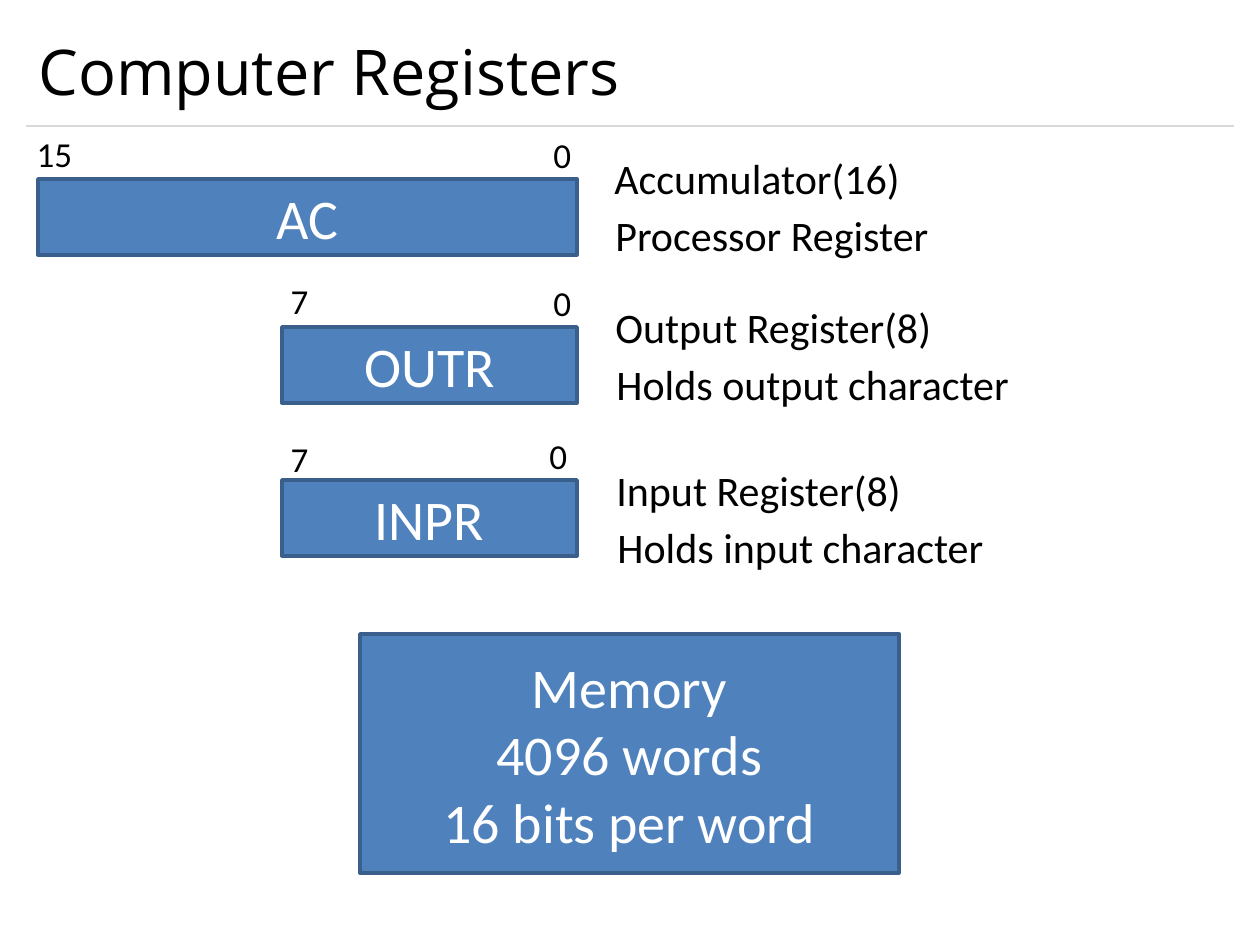
from dataclasses import dataclass

from lxml import etree
from pptx import Presentation
from pptx import util as u
from pptx.dml.color import RGBColor
from pptx.enum import shapes, text
from pptx.oxml.ns import qn

PX = 914400 / 126  # EMU in one px
BLUE = RGBColor(0x4F, 0x81, 0xBD)
EDGE = RGBColor(0x3A, 0x5F, 0x8C)
GREY = RGBColor(0xD9, 0xD9, 0xD9)
BLACK = RGBColor(0, 0, 0)
WHITE = RGBColor(0xFF, 0xFF, 0xFF)
LEFT, MID = text.PP_ALIGN.LEFT, text.PP_ALIGN.CENTER
RIGHT_EDGE = 577
BAR_H = 76
NOTE_STEP = 57


@dataclass
class Register:
    name: str
    high: str
    top: int
    width: int
    high_at: tuple[int, int]
    low_at: tuple[int, int]
    note_at: tuple[int, int]
    title: str
    role: str
    role_x: int
    role_w: int


REGISTERS = [
    Register("AC", "15", 179, 539, (23, 126), (541, 127), (602, 146),
             "Accumulator(16)", "Processor Register", 603, 341),
    Register("OUTR", "7", 327, 295, (268, 273), (541, 275), (603, 295),
             "Output Register(8)", "Holds output character", 604, 422),
    Register("INPR", "7", 480, 295, (268, 431), (537, 428), (604, 458),
             "Input Register(8)", "Holds input character", 605, 394),
]


def emu(*px: int) -> list[int]:
    return [round(v * PX) for v in px]


def write(frame, lines: list[str], size: int, color: RGBColor,
          align=LEFT, font: str = "Calibri") -> None:
    for i, line in enumerate(lines):
        para = frame.add_paragraph() if i else frame.paragraphs[0]
        para.text = line
        para.alignment = align
        para.font.size = u.Pt(size)
        para.font.name = font
        para.font.color.rgb = color


def label(slide, words: str, x: int, y: int, w: int, h: int, size: int,
          align=LEFT, wrap: bool = True, font: str = "Calibri"):
    frame = slide.shapes.add_textbox(*emu(x, y, w, h)).text_frame
    frame.word_wrap = wrap
    write(frame, [words], size, BLACK, align, font)
    return frame


def block(slide, lines: list[str], x: int, y: int, w: int, h: int) -> None:
    box = slide.shapes.add_shape(shapes.MSO_SHAPE.RECTANGLE, *emu(x, y, w, h))
    box.shadow.inherit = False
    box.fill.solid()
    box.fill.fore_color.rgb = BLUE
    box.line.color.rgb = EDGE
    box.line.width = u.Pt(2)
    box.text_frame.vertical_anchor = text.MSO_ANCHOR.MIDDLE
    write(box.text_frame, lines, 32, WHITE, MID)


def draw(slide, reg: Register) -> None:
    block(slide, [reg.name], RIGHT_EDGE - reg.width, reg.top, reg.width, BAR_H)
    # Bit numbers above the bar
    label(slide, reg.high, *reg.high_at, 63, 55, 20, MID)
    label(slide, "0", *reg.low_at, 38, 55, 20, MID)
    # Description to the right
    x, y = reg.note_at
    label(slide, reg.title, x, y, 552, 63, 24)
    label(slide, reg.role, reg.role_x, y + NOTE_STEP, reg.role_w, 63, 24,
          wrap=False)


def main() -> None:
    deck = Presentation()
    deck.slide_width, deck.slide_height = emu(1260, 945)
    slide = deck.slides.add_slide(deck.slide_layouts[6])

    # Title and rule
    head = label(slide, "Computer Registers", 26, 15, 1207, 111, 36,
                 font="Open Sans")
    head.vertical_anchor = text.MSO_ANCHOR.MIDDLE
    rule = slide.shapes.add_connector(
        shapes.MSO_CONNECTOR.STRAIGHT, *emu(26, 126, 1234, 126))
    rule.line.color.rgb = GREY
    rule.line.width = u.Pt(0.75)
    etree.SubElement(rule._element.spPr, qn("a:effectLst"))

    # Registers
    for reg in REGISTERS:
        draw(slide, reg)

    # Memory
    block(slide, ["Memory", "4096 words", "16 bits per word"],
          360, 634, 539, 239)
    deck.save("out.pptx")


if __name__ == "__main__":
    main()
